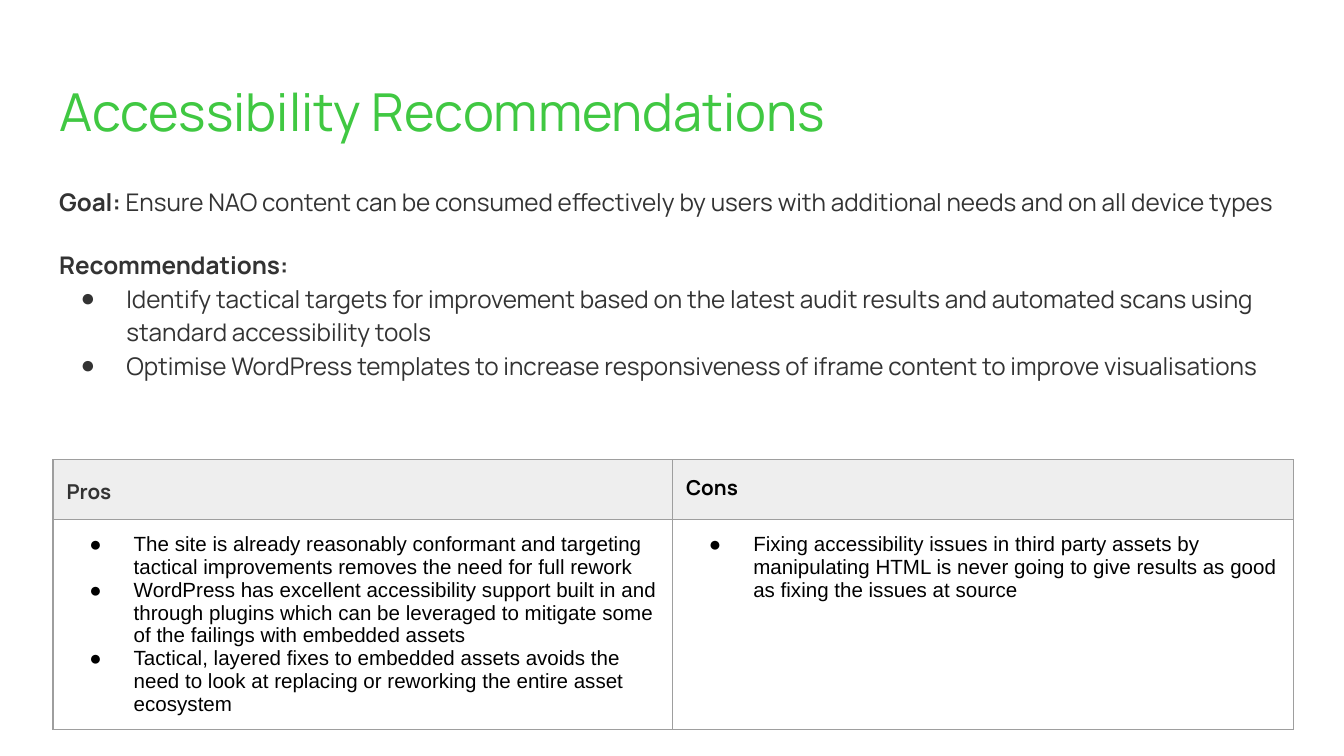
from lxml.etree import SubElement
from pptx import Presentation
from pptx.dml.color import RGBColor
from pptx.enum.text import MSO_ANCHOR as Anchor, MSO_AUTO_SIZE as AutoSize, PP_ALIGN as Align
from pptx.oxml.ns import qn
from pptx.util import Pt

PX = 4572
GREEN = RGBColor(0x40, 0xC8, 0x42)
DARK = RGBColor(0x33, 0x33, 0x33)
BLACK = RGBColor(0, 0, 0)
HEADER_FILL = RGBColor(0xEE, 0xEE, 0xEE)
BORDER = RGBColor(0x9E, 0x9E, 0x9E)
HEADING_FONT, CELL_FONT = "Manrope", "Arial"
INSET = 20
BULLET_LEFT = 100
HEADER_HEIGHT = 89
PROS_WIDTH = 922

GOAL = ("Ensure NAO content can be consumed effectively by users with "
        "additional needs and on all device types")
RECOMMENDATIONS = [
    "Identify tactical targets for improvement based on the latest audit results "
    "and automated scans using standard accessibility tools",
    "Optimise WordPress templates to increase responsiveness of iframe content "
    "to improve visualisations",
]
PROS = [
    "The site is already reasonably conformant and targeting tactical improvements "
    "removes the need for full rework",
    "WordPress has excellent accessibility support built in and through plugins which "
    "can be leveraged to mitigate some of the failings with embedded assets",
    "Tactical, layered fixes to embedded assets avoids the need to look at replacing "
    "or reworking the entire asset ecosystem",
]
CONS = [
    "Fixing accessibility issues in third party assets by manipulating HTML is never "
    "going to give results as good as fixing the issues at source",
]


def add_bullet(para, color, hang):
    """Give a paragraph a round bullet with a hanging indent, or none if hang is 0."""
    props = para._p.get_or_add_pPr()
    props.set("marL", str(BULLET_LEFT * PX if hang else 0))
    props.set("indent", str(-hang * PX))
    if not hang:
        SubElement(props, qn("a:buNone"))
        return
    bullet_color = SubElement(props, qn("a:buClr"))
    SubElement(bullet_color, qn("a:srgbClr"), val=str(color))
    SubElement(props, qn("a:buFont"), typeface=CELL_FONT)
    SubElement(props, qn("a:buChar"), char="●")


def write_paragraph(para, spans, size, font, color, hang=0, spacing=1.0, before=0, after=0):
    """Write (text, bold) spans into one paragraph and format it."""
    add_bullet(para, color, hang)
    para.alignment = Align.LEFT
    para.line_spacing = spacing
    para.space_before, para.space_after = Pt(before), Pt(after)
    for text, bold in spans:
        span = para.add_run()
        span.text = text
        span.font.size, span.font.name, span.font.bold = Pt(size), font, bold
        span.font.color.rgb = color


def paragraphs(frame, count):
    """Return count paragraphs of a text frame, the first one included."""
    return [frame.paragraphs[0]] + [frame.add_paragraph() for _ in range(count - 1)]


def set_insets(holder):
    """Set equal margins on a text frame or a table cell."""
    holder.margin_left = holder.margin_right = INSET * PX
    holder.margin_top = holder.margin_bottom = INSET * PX


def set_placeholder(shape, box):
    """Move a placeholder to a box and return its prepared text frame."""
    shape.left, shape.top, shape.width, shape.height = (side * PX for side in box)
    frame = shape.text_frame
    frame.word_wrap = True
    frame.auto_size = AutoSize.NONE
    frame.vertical_anchor = Anchor.TOP
    set_insets(frame)
    return frame


def fill_title(shape, box):
    """Write the slide title."""
    frame = set_placeholder(shape, box)
    write_paragraph(frame.paragraphs[0], [("Accessibility Recommendations", False)],
                    28, HEADING_FONT, GREEN)


def fill_body(shape, box):
    """Write the goal and the list of recommendations."""
    frame = set_placeholder(shape, box)
    entries = [([("Goal: ", True), (GOAL, False)], 0, 0),
               ([("Recommendations:", True)], 0, 16)]
    entries += [([(text, False)], 68, 0) for text in RECOMMENDATIONS]
    for para, (spans, hang, before) in zip(paragraphs(frame, len(entries)), entries):
        write_paragraph(para, spans, 13, HEADING_FONT, DARK, hang, 1.15, before)


def format_cell(cell, fill=None):
    """Set the margins, borders and fill of a table cell."""
    set_insets(cell)
    props = cell._tc.get_or_add_tcPr()
    for side in ("lnL", "lnR", "lnT", "lnB"):
        line = SubElement(props, qn(f"a:{side}"), w=str(Pt(0.75)))
        SubElement(SubElement(line, qn("a:solidFill")), qn("a:srgbClr"), val=str(BORDER))
    if fill is None:
        cell.fill.background()
    else:
        cell.fill.solid()
        cell.fill.fore_color.rgb = fill


def add_comparison(page, box):
    """Add the table of pros and cons."""
    left, top, width, height = (side * PX for side in box)
    table = page.shapes.add_table(2, 2, left, top, width, height).table
    table.first_row = table.horz_banding = False
    table.columns[0].width = PROS_WIDTH * PX
    table.columns[1].width = width - PROS_WIDTH * PX
    table.rows[0].height = HEADER_HEIGHT * PX
    table.rows[1].height = height - HEADER_HEIGHT * PX
    columns = [("Pros", DARK, 1.15, 16, PROS), ("Cons", BLACK, 1.0, 0, CONS)]
    for index, (heading, color, spacing, after, points) in enumerate(columns):
        header, content = table.cell(0, index), table.cell(1, index)
        format_cell(header, HEADER_FILL)
        format_cell(content)
        write_paragraph(header.text_frame.paragraphs[0], [(heading, True)], 11,
                        HEADING_FONT, color, spacing=spacing, after=after)
        for para, text in zip(paragraphs(content.text_frame, len(points)), points):
            write_paragraph(para, [(text, False)], 11, CELL_FONT, BLACK, 66)


def main():
    """Build and save the deck."""
    deck = Presentation()
    deck.slide_width, deck.slide_height = 2000 * PX, 1125 * PX
    page = deck.slides.add_slide(deck.slide_layouts[1])
    fill_title(page.shapes.title, (68, 98, 1864, 126))
    fill_body(page.placeholders[1], (68, 252, 1864, 748))
    add_comparison(page, (79, 684, 1846, 400))
    deck.save("out.pptx")


if __name__ == "__main__":
    main()
